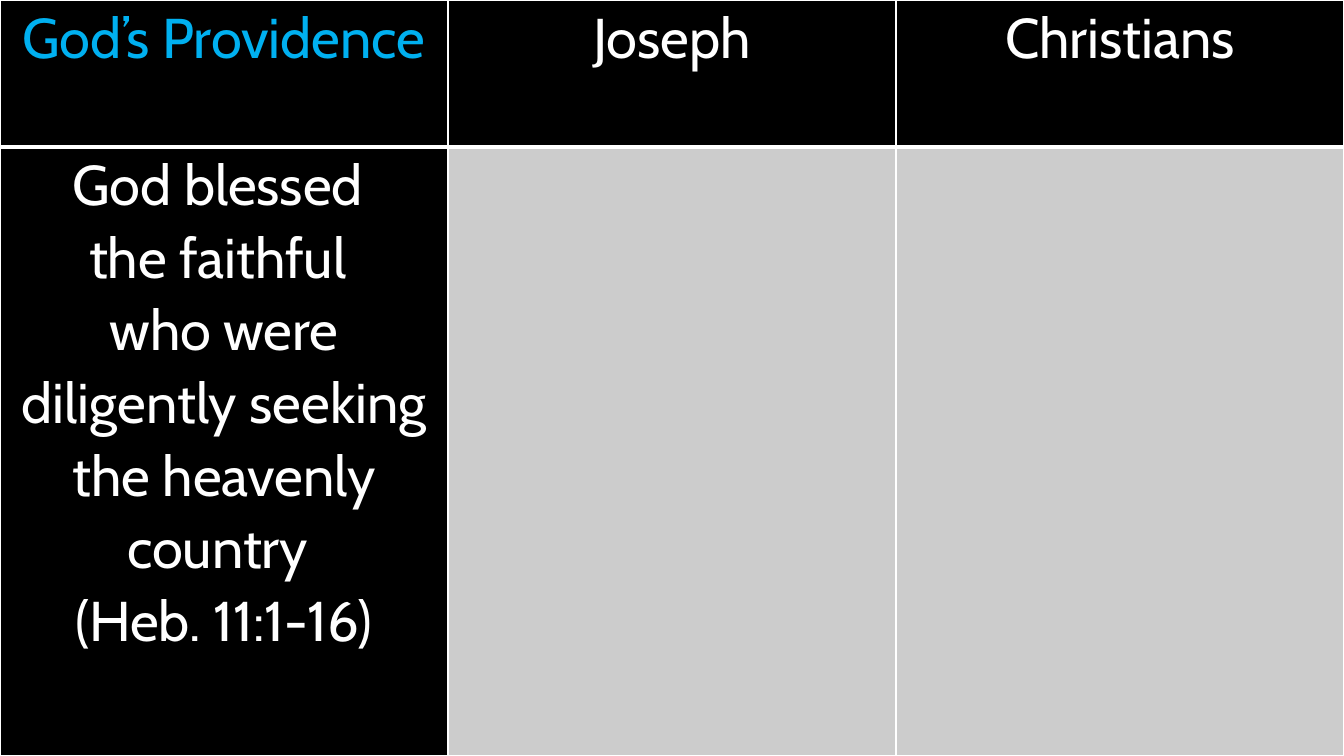
from dataclasses import dataclass

from lxml import etree
from pptx import Presentation
from pptx.dml.color import RGBColor
from pptx.enum.text import PP_ALIGN
from pptx.oxml.ns import qn
from pptx.table import _Cell
from pptx.util import Inches, Pt

CENTER = PP_ALIGN.CENTER
BLACK = RGBColor(0x00, 0x00, 0x00)
WHITE = RGBColor(0xFF, 0xFF, 0xFF)
BLUE = RGBColor(0x00, 0xB0, 0xF0)
GRAY = RGBColor(0xCC, 0xCC, 0xCC)

WIDTH, HEIGHT, HEAD = 13.33, 7.5, 1.46
MARGINS = {
    "margin_left": Inches(0.07),
    "margin_right": Inches(0.07),
    "margin_top": 0,
    "margin_bottom": 0,
}
FONT = {"name": "Cabin", "size": Pt(40), "bold": False}


@dataclass
class Entry:
    lines: tuple[str, ...] = ()
    fill: RGBColor = BLACK
    color: RGBColor = WHITE


ROWS = [
    [
        Entry(("God’s Providence",), color=BLUE),
        Entry(("Joseph",)),
        Entry(("Christians",)),
    ],
    [
        Entry((
            "God blessed ",
            "the faithful ",
            "who were diligently seeking the heavenly",
            "country ",
            "(Heb. 11:1-16)",
        )),
        Entry(fill=GRAY),
        Entry(fill=GRAY),
    ],
]
EDGES = [
    {"lnL": 1, "lnR": 1, "lnT": 1, "lnB": 3},
    {"lnL": 1, "lnR": 1, "lnT": 3, "lnB": 1},
]


def format_with(target: object, values: dict) -> None:
    for name, value in values.items():
        setattr(target, name, value)


def add_edges(cell: _Cell, edges: dict[str, int]) -> None:
    props = cell._tc.get_or_add_tcPr()
    for tag, width in edges.items():
        line = etree.SubElement(props, qn(f"a:{tag}"), w=str(Pt(width)))
        solid = etree.SubElement(line, qn("a:solidFill"))
        etree.SubElement(solid, qn("a:srgbClr"), val=str(WHITE))


def fill_cell(cell: _Cell, entry: Entry, edges: dict[str, int]) -> None:
    format_with(cell, MARGINS)
    add_edges(cell, edges)
    cell.fill.solid()
    cell.fill.fore_color.rgb = entry.fill
    if not entry.lines:
        return
    cell.text = "\n".join(entry.lines)
    for para in cell.text_frame.paragraphs:
        format_with(para, {"alignment": CENTER, "line_spacing": 1.07})
        for run in para.runs:
            format_with(run.font, FONT)
            run.font.color.rgb = entry.color


def main() -> None:
    deck = Presentation()
    deck.slide_width, deck.slide_height = Inches(WIDTH), Inches(HEIGHT)
    slide = deck.slides.add_slide(deck.slide_layouts[6])
    back = slide.background.fill
    back.solid()
    back.fore_color.rgb = BLACK

    table = slide.shapes.add_table(
        len(ROWS), len(ROWS[0]), 0, 0, Inches(WIDTH), Inches(HEIGHT)
    ).table
    for row, height in zip(table.rows, (HEAD, HEIGHT - HEAD)):
        row.height = Inches(height)
    for row, entries, edges in zip(table.rows, ROWS, EDGES):
        for cell, entry in zip(row.cells, entries):
            fill_cell(cell, entry, edges)
    deck.save("out.pptx")


if __name__ == "__main__":
    main()
